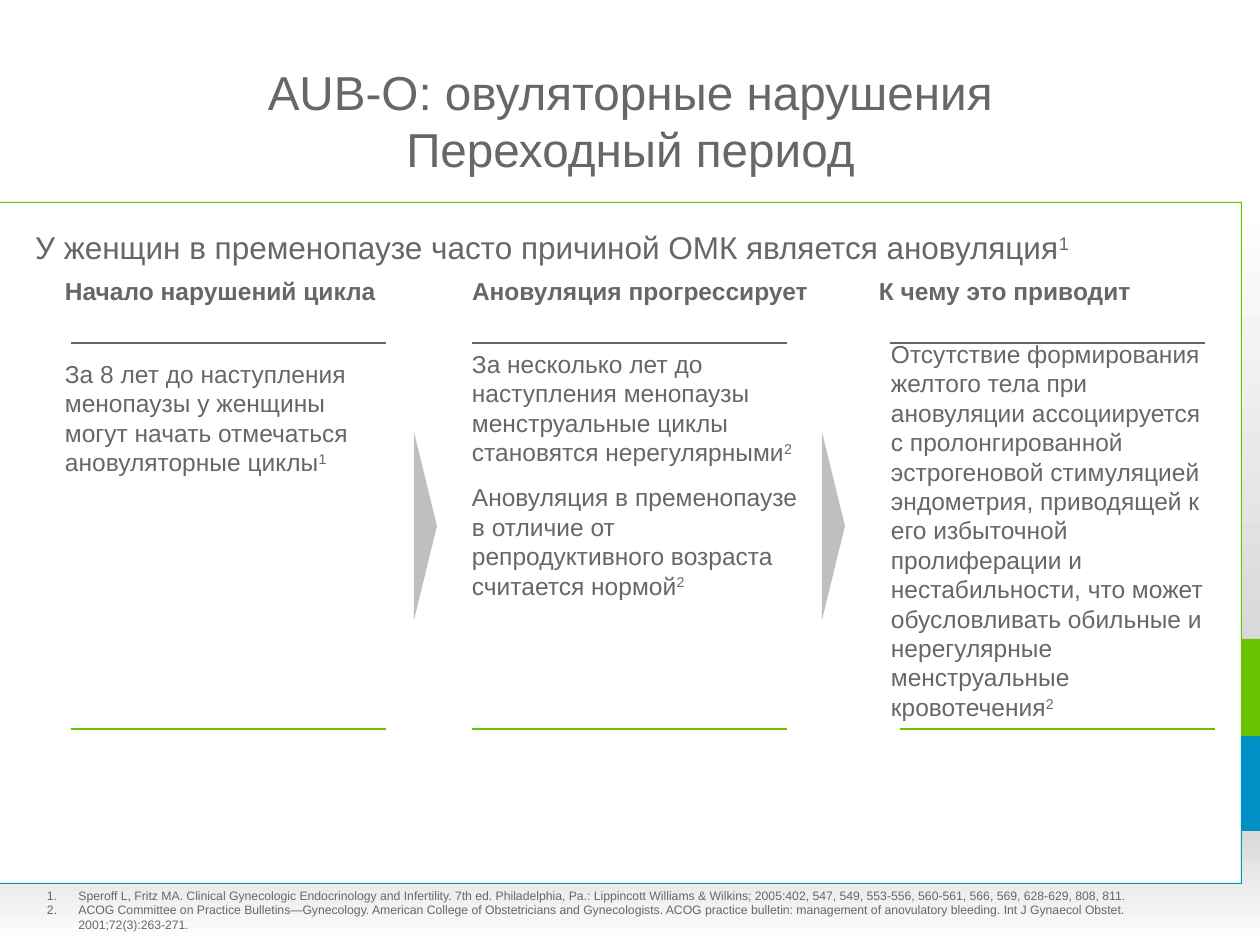
from dataclasses import dataclass

from lxml import etree
from pptx import Presentation
from pptx.dml.color import RGBColor
from pptx.enum.shapes import MSO_CONNECTOR, MSO_SHAPE
from pptx.enum.text import MSO_ANCHOR, MSO_AUTO_SIZE, PP_ALIGN
from pptx.oxml.ns import qn
from pptx.util import Emu, Pt

STRAIGHT = MSO_CONNECTOR.STRAIGHT
TRIANGLE = MSO_SHAPE.ISOSCELES_TRIANGLE
RECTANGLE = MSO_SHAPE.RECTANGLE
TOP, MIDDLE, BOTTOM = MSO_ANCHOR.TOP, MSO_ANCHOR.MIDDLE, MSO_ANCHOR.BOTTOM
NO_FIT = MSO_AUTO_SIZE.NONE
LEFT, CENTER = PP_ALIGN.LEFT, PP_ALIGN.CENTER
SCALE = 914400 / 126
WIDTH, HEIGHT = 1260, 945


@dataclass(frozen=True)
class Theme:
    """Colours, font and type sizes of the slide."""
    font: str = "Arial"
    text: str = "676767"
    green: str = "6BC200"
    blue: str = "0090C5"
    arrow: str = "BFBFBF"
    shade: str = "D9D9D9"
    white: str = "FFFFFF"
    heading: float = 27.2
    title: float = 18
    body: float = 14
    note: float = 7
    rule: float = 0.75


THEME = Theme()

COLUMNS = [
    {"head": (65, 326), "body": (65, 344), "rules": (71, 71),
     "title": "Начало нарушений цикла",
     "paras": [("За 8 лет до наступления менопаузы у женщины могут начать "
                "отмечаться ановуляторные циклы", "1")]},
    {"head": (472, 349), "body": (472, 334), "rules": (472, 472),
     "title": "Ановуляция прогрессирует",
     "paras": [("За несколько лет до наступления менопаузы менструальные циклы "
                "становятся нерегулярными", "2"),
               ("Ановуляция в пременопаузе в отличие от репродуктивного возраста "
                "считается нормой", "2")]},
    {"head": (879, 314), "body": (891, 324), "rules": (890, 900),
     "title": "К чему это приводит",
     "paras": [("Отсутствие формирования желтого тела при ановуляции ассоциируется "
                "с пролонгированной эстрогеновой стимуляцией эндометрия, приводящей "
                "к его избыточной пролиферации и нестабильности, что может "
                "обусловливать обильные и нерегулярные менструальные кровотечения",
                "2")]},
]
REFERENCES = [
    "Speroff L, Fritz MA. Clinical Gynecologic Endocrinology and Infertility. 7th ed. "
    "Philadelphia, Pa.: Lippincott Williams & Wilkins; 2005:402, 547, 549, 553-556, "
    "560-561, 566, 569, 628-629, 808, 811.",
    "ACOG Committee on Practice Bulletins—Gynecology. American College of Obstetricians "
    "and Gynecologists. ACOG practice bulletin: management of anovulatory bleeding. "
    "Int J Gynaecol Obstet. 2001;72(3):263-271.",
]


def px(*lengths):
    """Turn pixel lengths into EMU."""
    return [Emu(round(length * SCALE)) for length in lengths]


def color(code):
    """Turn a hex code into a colour."""
    return RGBColor.from_string(code)


def set_frame(shape, insets=(0, 0, 0, 0), anchor=TOP):
    """Set wrapping, insets and anchor of a shape's text and return its frame."""
    frame = shape.text_frame
    frame.auto_size = NO_FIT
    frame.word_wrap = True
    frame.vertical_anchor = anchor
    (frame.margin_left, frame.margin_top,
     frame.margin_right, frame.margin_bottom) = px(*insets)
    return frame


def add_text(page, box, insets=(0, 0, 0, 0), anchor=TOP):
    """Add a text box and return its frame."""
    return set_frame(page.shapes.add_textbox(*px(*box)), insets, anchor)


def next_para(frame, index):
    """Return the first paragraph of a frame or add another one."""
    return frame.add_paragraph() if index else frame.paragraphs[0]


def style(para, size, bold=False, align=LEFT):
    """Set the font and alignment of a paragraph."""
    para.alignment = align
    para.font.name = THEME.font
    para.font.size = Pt(size)
    para.font.bold = bold
    para.font.color.rgb = color(THEME.text)


def write_cited(para, words, mark):
    """Write words followed by a superscript reference mark."""
    para.add_run().text = words
    span = para.add_run()
    span.text = mark
    span._r.get_or_add_rPr().set("baseline", "30000")


def add_outline(page, points):
    """Add a closed outline and return it."""
    builder = page.shapes.build_freeform(*points[0], scale=SCALE)
    builder.add_line_segments(points[1:], close=True)
    return builder.convert_to_shape()


def clear_edge(shape):
    """Remove the shadow and the line of a shape."""
    shape.shadow.inherit = False
    shape.line.fill.background()


def fill_solid(shape, code):
    """Give a shape one plain colour."""
    clear_edge(shape)
    shape.fill.solid()
    shape.fill.fore_color.rgb = color(code)


def fill_gradient(shape, angle):
    """Shade a shape from grey to white."""
    clear_edge(shape)
    shape.fill.gradient()
    shape.fill.gradient_angle = angle
    for stop, code in zip(shape.fill.gradient_stops, (THEME.shade, THEME.white)):
        stop.color.rgb = color(code)


def add_border(page, box):
    """Draw the frame around the content with its side tabs and shading."""
    left, top, width, height = box
    right, bottom = left + width, top + height
    green_top, tab_split, blue_end = top + 437, top + 534, top + 629
    corner = [(WIDTH, HEIGHT), (WIDTH, blue_end), (right, blue_end),
              (right, bottom), (left, bottom), (left, HEIGHT)]
    fill_gradient(add_outline(page, corner), 270)
    side = (right, top, WIDTH - right, green_top - top)
    fill_gradient(page.shapes.add_shape(RECTANGLE, *px(*side)), 90)
    for edge, inner, near, code in ((bottom, bottom - 1, blue_end, THEME.blue),
                                    (top, top + 1, green_top, THEME.green)):
        points = [(right, near), (right, edge), (left, edge), (left, inner),
                  (right - 1, inner), (right - 1, tab_split), (WIDTH, tab_split),
                  (WIDTH, near)]
        fill_solid(add_outline(page, points), code)


def add_heading(page, box):
    """Write the centred two-line heading."""
    para = add_text(page, box, (13, 6, 13, 6), MIDDLE).paragraphs[0]
    para.text = "AUB-O: овуляторные нарушения\vПереходный период"
    style(para, THEME.heading, align=CENTER)


def add_title(page, box):
    """Move and fill the title placeholder."""
    title = page.shapes.title
    title.left, title.top, title.width, title.height = px(*box)
    para = set_frame(title, anchor=BOTTOM).paragraphs[0]
    write_cited(para, "У женщин в пременопаузе часто причиной ОМК является ановуляция", "1")
    style(para, THEME.title)


def add_rule(page, left, top, code):
    """Draw a horizontal rule of one column."""
    rule = page.shapes.add_connector(STRAIGHT, *px(left, top, left + 315, top))
    rule.line.color.rgb = color(code)
    rule.line.width = Pt(THEME.rule)
    etree.SubElement(rule._element.spPr, qn("a:effectLst"))


def add_column(page, column, top, bottom):
    """Write one column with its head, body and two rules."""
    left, width = column["head"]
    para = add_text(page, (left, top, width, 38), (0, 0, 0, 5)).paragraphs[0]
    para.text = column["title"]
    style(para, THEME.body, bold=True)
    left, body_top = column["body"]
    frame = add_text(page, (left, body_top, 327, bottom - body_top), (0, 15, 0, 0))
    for index, (words, mark) in enumerate(column["paras"]):
        para = next_para(frame, index)
        para.space_before, para.space_after = Pt(3 if index else 0), Pt(6)
        write_cited(para, words, mark)
        style(para, THEME.body)
    upper, lower = column["rules"]
    add_rule(page, upper, top + 67, THEME.text)
    add_rule(page, lower, bottom, THEME.green)


def add_arrow(page, box):
    """Draw a triangle that fills the box and points right."""
    left, top, width, height = box
    turned = (left + (width - height) / 2, top + (height - width) / 2, height, width)
    shape = page.shapes.add_shape(TRIANGLE, *px(*turned))
    shape.rotation = 90
    fill_solid(shape, THEME.arrow)


def add_references(page, box):
    """Write the numbered references."""
    frame = add_text(page, box, (13, 6, 13, 6))
    for index, words in enumerate(REFERENCES):
        para = next_para(frame, index)
        para.text = words
        properties = para._p.get_or_add_pPr()
        properties.set("marL", "228600")
        properties.set("indent", "-228600")
        etree.SubElement(properties, qn("a:buAutoNum"), type="arabicPeriod")
        style(para, THEME.note)


def main():
    """Build the slide and save the deck."""
    deck = Presentation()
    deck.slide_width, deck.slide_height = px(WIDTH, HEIGHT)
    page = deck.slides.add_slide(deck.slide_layouts[5])
    add_border(page, (0, 202, 1242, 682))
    add_heading(page, (35, 66, 1191, 108))
    add_title(page, (35, 214, 1133, 52))
    for column in COLUMNS:
        add_column(page, column, 276, 729)
    for left in (414, 822):
        add_arrow(page, (left, 432, 23, 188))
    add_references(page, (34, 882, 1181, 57))
    deck.save("out.pptx")


if __name__ == "__main__":
    main()
